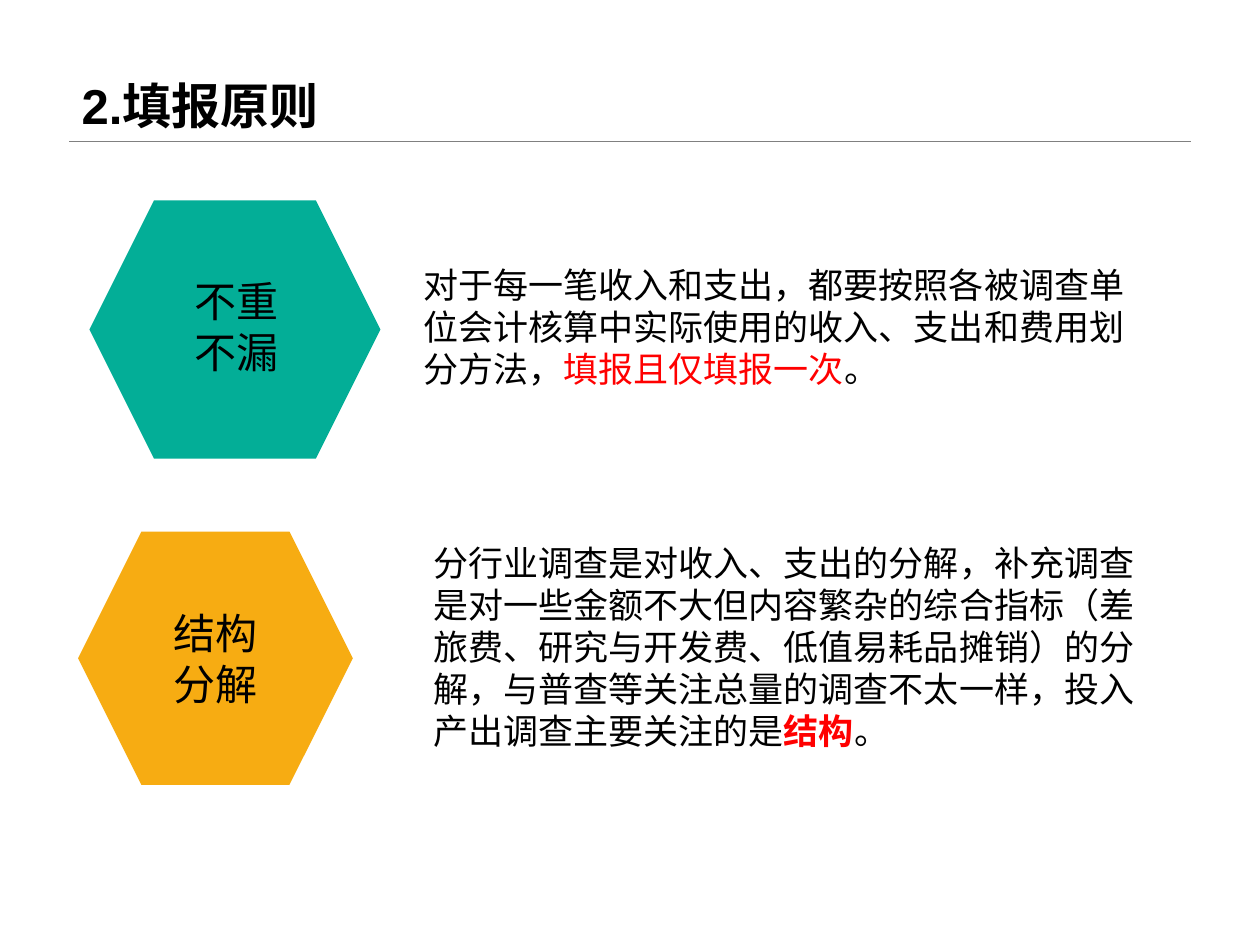
from dataclasses import dataclass

from lxml import etree
from pptx import Presentation
from pptx.dml.color import RGBColor
from pptx.enum import shapes, text
from pptx.oxml import ns
from pptx.util import Pt


@dataclass(frozen=True)
class Theme:
    ink: str = "000000"
    accent: str = "FF0000"
    rule: str = "808080"
    green: str = "03AE97"
    amber: str = "F7AC12"
    title_font: str = "Arial"
    label_font: str = "Calibri"
    body_font: str = "Noto Sans CJK SC"
    title_size: int = 28
    label_size: int = 24
    body_size: int = 20


THEME = Theme()
MARGIN = 39.6
SLIDE_WIDTH, SLIDE_HEIGHT = 720, 540
RULE_Y = 80.6


def points(*lengths):
    return [Pt(length) for length in lengths]


def add_run(paragraph, wording, size, font, color=THEME.ink, bold=False):
    run = paragraph.add_run()
    run.text = wording
    run.font.size = Pt(size)
    run.font.bold = bold
    run.font.color.rgb = RGBColor.from_string(color)
    run.font.name = font
    east_asian = etree.SubElement(run.font._element, ns.qn("a:ea"))
    east_asian.set("typeface", THEME.body_font)


def add_title(slide, wording):
    title = slide.shapes.add_textbox(
        *points(MARGIN, 0, SLIDE_WIDTH - 2 * MARGIN, RULE_Y)).text_frame
    title.word_wrap = True
    title.vertical_anchor = text.MSO_ANCHOR.BOTTOM
    title.paragraphs[0].line_spacing = 0.9
    add_run(title.paragraphs[0], wording, THEME.title_size, THEME.title_font, bold=True)


def add_rule(slide):
    rule = slide.shapes.add_connector(
        shapes.MSO_CONNECTOR.STRAIGHT,
        *points(MARGIN, RULE_Y, SLIDE_WIDTH - MARGIN, RULE_Y))
    rule.line.color.rgb = RGBColor.from_string(THEME.rule)
    rule.line.width = Pt(0.25)
    etree.SubElement(rule._element.spPr, ns.qn("a:effectLst"))


def add_hexagon(parent, box, color):
    hexagon = parent.shapes.add_shape(shapes.MSO_SHAPE.HEXAGON, *points(*box))
    hexagon.shadow.inherit = False
    hexagon.fill.solid()
    hexagon.fill.fore_color.rgb = RGBColor.from_string(color)
    hexagon.line.fill.background()
    return hexagon


def write_label(frame, lines, font):
    for index, line in enumerate(lines):
        paragraph = frame.add_paragraph() if index else frame.paragraphs[0]
        paragraph.alignment = text.PP_ALIGN.CENTER
        add_run(paragraph, line, THEME.label_size, font)


def add_explanation(slide, box, lead, key_phrase, bold_key=False):
    """Add a paragraph that closes with a highlighted phrase and a full stop."""
    frame = slide.shapes.add_textbox(*points(*box)).text_frame
    frame.word_wrap = True
    frame.auto_size = text.MSO_AUTO_SIZE.SHAPE_TO_FIT_TEXT
    style = THEME.body_size, THEME.body_font
    paragraph = frame.paragraphs[0]
    add_run(paragraph, lead, *style)
    add_run(paragraph, key_phrase, *style, color=THEME.accent, bold=bold_key)
    add_run(paragraph, "。", *style)


def add_completeness_principle(slide):
    badge = slide.shapes.add_group_shape()
    add_hexagon(badge, (51.1, 114.5, 166.3, 147.6), THEME.green)
    label = badge.shapes.add_textbox(*points(103.7, 154.1, 63.4, 65.5)).text_frame
    label.word_wrap = False
    label.auto_size = text.MSO_AUTO_SIZE.SHAPE_TO_FIT_TEXT
    write_label(label, ("不重", "不漏"), THEME.label_font)
    add_explanation(
        slide, (234.7, 146.9, 432.7, 79.9),
        "对于每一笔收入和支出，都要按照各被调查单位会计核算中实际使用的收入、"
        "支出和费用划分方法，",
        "填报且仅填报一次")


def add_structure_principle(slide):
    badge = add_hexagon(slide, (44.6, 303.8, 157, 144.7), THEME.amber)
    badge.text_frame.vertical_anchor = text.MSO_ANCHOR.MIDDLE
    write_label(badge.text_frame, ("结构", "分解"), THEME.body_font)
    add_explanation(
        slide, (240.5, 306, 427, 128.2),
        "分行业调查是对收入、支出的分解，补充调查是对一些金额不大但内容繁杂的"
        "综合指标（差旅费、研究与开发费、低值易耗品摊销）的分解，与普查等关注"
        "总量的调查不太一样，投入产出调查主要关注的是",
        "结构", bold_key=True)


def main():
    deck = Presentation()
    deck.slide_width, deck.slide_height = points(SLIDE_WIDTH, SLIDE_HEIGHT)
    slide = deck.slides.add_slide(deck.slide_layouts[6])
    add_rule(slide)
    add_title(slide, "2.填报原则")
    add_completeness_principle(slide)
    add_structure_principle(slide)
    deck.save("out.pptx")


if __name__ == "__main__":
    main()
